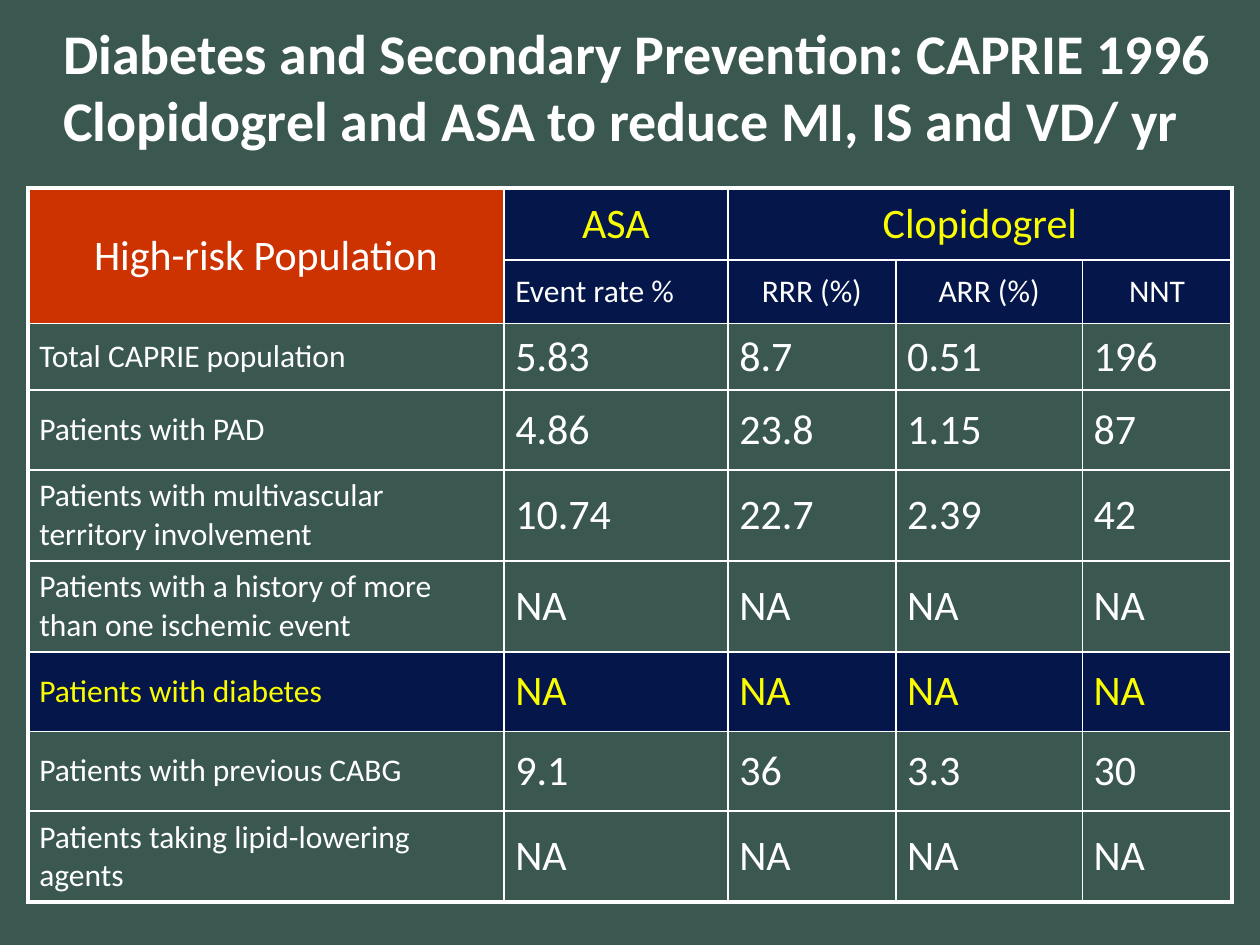
from pptx import Presentation
from pptx.dml.color import RGBColor
from pptx.enum.text import MSO_ANCHOR, MSO_AUTO_SIZE, PP_ALIGN
from pptx.oxml.ns import qn
from pptx.util import Pt
from lxml.etree import SubElement

WHITE = RGBColor(0xFF, 0xFF, 0xFF)
YELLOW = RGBColor(0xFA, 0xFD, 0x00)
NAVY = RGBColor(0x05, 0x17, 0x4A)
RED = RGBColor(0xCC, 0x33, 0x00)
GREEN = RGBColor(0x3A, 0x57, 0x50)
FONT = "Calibri"

# Content
TITLE = ("Diabetes and Secondary Prevention: CAPRIE 1996\v"
         "Clopidogrel and ASA to reduce MI, IS and VD/ yr")
ROWS = [
    ("High-risk Population", "ASA", "Clopidogrel", "", ""),
    ("", "Event rate %", "RRR (%)", "ARR (%)", "NNT"),
    ("Total CAPRIE population", "5.83", "8.7", "0.51", "196"),
    ("Patients with PAD", "4.86", "23.8", "1.15", "87"),
    ("Patients with multivascular territory involvement", "10.74", "22.7", "2.39", "42"),
    ("Patients with a history of more than one ischemic event", "NA", "NA", "NA", "NA"),
    ("Patients with diabetes", "NA", "NA", "NA", "NA"),
    ("Patients with previous CABG", "9.1", "36", "3.3", "30"),
    ("Patients taking lipid-lowering agents", "NA", "NA", "NA", "NA"),
]
MERGES = [((0, 0), (1, 0)), ((0, 2), (0, 4))]
COLUMN_WIDTHS = [272, 128, 96, 106.5, 85.5]
ROW_HEIGHTS = [41, 36, 38, 45.5, 52, 52, 45.5, 45.5, 52]
DIABETES_ROW = 6
TABLE_LEFT, TABLE_TOP = 16, 107.5
INNER_LINE, OUTER_LINE = 1, 2.25


def set_values(target, values):
    for name, value in values.items():
        setattr(target, name, value)


def cell_format(row, column):
    """Return fill, text colour, size and alignment for a table position."""
    if (row, column) == (0, 0):
        return RED, WHITE, 24, PP_ALIGN.CENTER
    if row == 0:
        return NAVY, YELLOW, 24, PP_ALIGN.CENTER
    if row == 1:
        return NAVY, WHITE, 18, PP_ALIGN.CENTER if column > 1 else PP_ALIGN.LEFT
    size = 18 if column == 0 else 24
    if row == DIABETES_ROW:
        return NAVY, YELLOW, size, PP_ALIGN.LEFT
    return None, WHITE, size, PP_ALIGN.LEFT


def add_borders(cell, row, column):
    outer = {
        "a:lnL": column == 0,
        "a:lnR": column + cell.span_width == len(COLUMN_WIDTHS),
        "a:lnT": row == 0,
        "a:lnB": row + cell.span_height == len(ROW_HEIGHTS),
    }
    properties = cell._tc.get_or_add_tcPr()
    for tag, is_outer in outer.items():
        width = Pt(OUTER_LINE if is_outer else INNER_LINE)
        line = SubElement(properties, qn(tag), w=str(width))
        fill = SubElement(line, qn("a:solidFill"))
        SubElement(fill, qn("a:srgbClr"), val=str(WHITE))


presentation = Presentation()
set_values(presentation, {"slide_width": Pt(720), "slide_height": Pt(540)})
slide = presentation.slides.add_slide(presentation.slide_layouts[5])
slide.background.fill.solid()
slide.background.fill.fore_color.rgb = GREEN

# Title
title = slide.shapes.title
set_values(title, {"left": Pt(0), "top": Pt(10), "width": Pt(720), "height": Pt(78)})
set_values(title.text_frame, {"text": TITLE, "word_wrap": True,
                              "auto_size": MSO_AUTO_SIZE.NONE,
                              "vertical_anchor": MSO_ANCHOR.MIDDLE})
paragraph = title.text_frame.paragraphs[0]
paragraph.alignment = PP_ALIGN.LEFT
paragraph_properties = paragraph._p.get_or_add_pPr()
paragraph_properties.set("marL", str(Pt(28.8)))
paragraph_properties.set("indent", "0")
for run in paragraph.runs:
    set_values(run.font, {"name": FONT, "size": Pt(32), "bold": True})
    run.font.color.rgb = WHITE

# Table grid
table = slide.shapes.add_table(
    len(ROWS), len(COLUMN_WIDTHS), Pt(TABLE_LEFT), Pt(TABLE_TOP),
    Pt(sum(COLUMN_WIDTHS)), Pt(sum(ROW_HEIGHTS))).table
set_values(table, {"first_row": False, "horz_banding": False})
for column, width in zip(table.columns, COLUMN_WIDTHS):
    column.width = Pt(width)
for row, height in zip(table.rows, ROW_HEIGHTS):
    row.height = Pt(height)
for start, end in MERGES:
    table.cell(*start).merge(table.cell(*end))

# Table cells
for row_index, texts in enumerate(ROWS):
    for column_index, text in enumerate(texts):
        cell = table.cell(row_index, column_index)
        fill, colour, size, alignment = cell_format(row_index, column_index)
        add_borders(cell, row_index, column_index)
        if fill is None:
            cell.fill.background()
        else:
            cell.fill.solid()
            cell.fill.fore_color.rgb = fill
        set_values(cell, {"vertical_anchor": MSO_ANCHOR.MIDDLE,
                          "margin_left": Pt(6.5), "margin_right": Pt(6.5),
                          "margin_top": Pt(3.6), "margin_bottom": Pt(3.6)})
        if text:
            paragraph = cell.text_frame.paragraphs[0]
            paragraph.alignment = alignment
            run = paragraph.add_run()
            run.text = text
            set_values(run.font, {"name": FONT, "size": Pt(size), "bold": False})
            run.font.color.rgb = colour

presentation.save("out.pptx")
